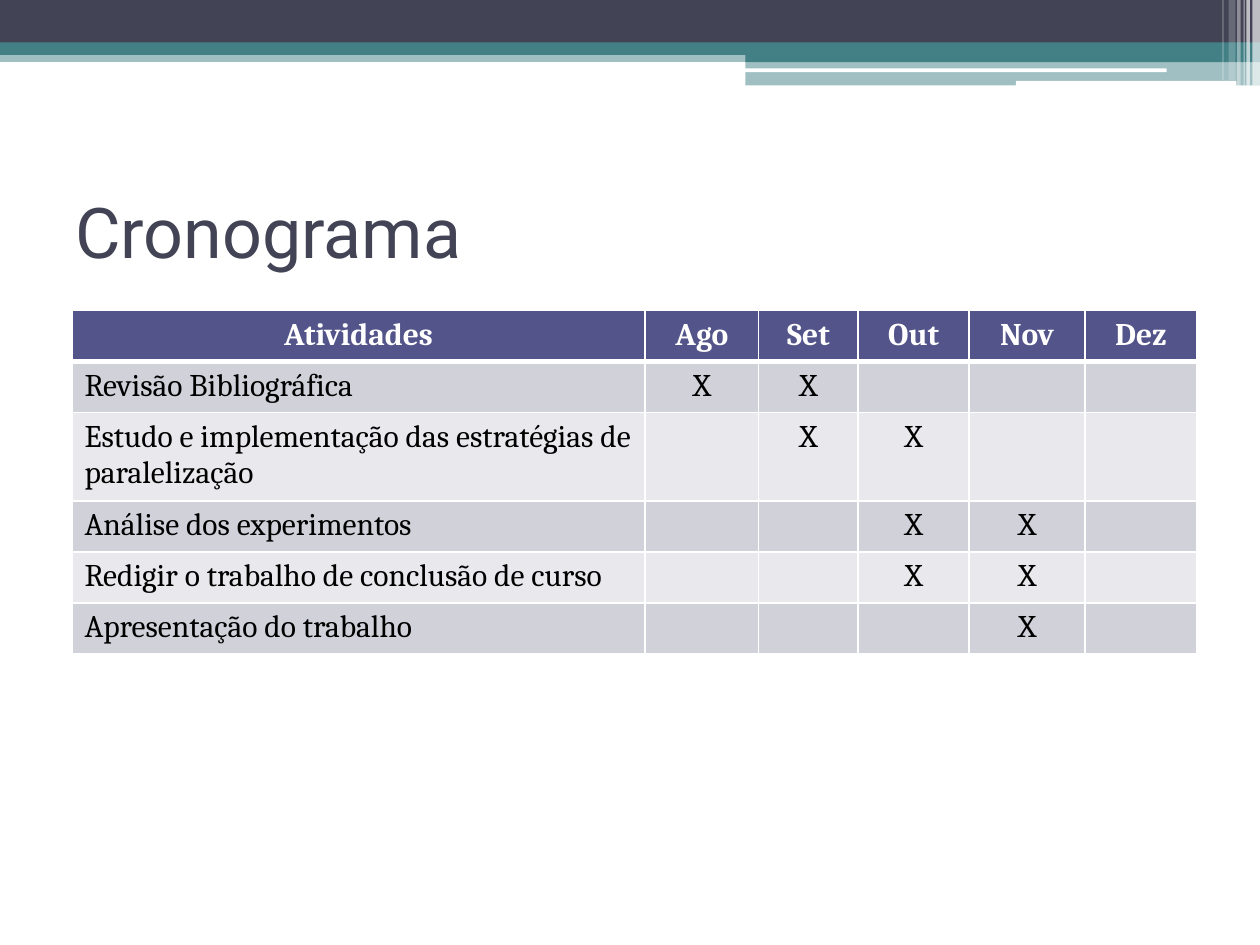
from dataclasses import dataclass

from lxml.etree import SubElement
from pptx import Presentation
from pptx.dml.color import RGBColor as RGB
from pptx.enum.shapes import MSO_SHAPE as Shape
from pptx.enum.text import MSO_ANCHOR as Anchor, PP_ALIGN as Align
from pptx.oxml import parse_xml
from pptx.oxml.ns import nsdecls, qn
from pptx.util import Pt


@dataclass(frozen=True)
class Theme:
    dark: str = "424456"
    teal: str = "438086"
    white: str = "FFFFFF"
    black: str = "000000"
    head: str = "53548A"
    bands: tuple = ("D1D1DA", "E9E9ED")
    title_font: str = "Roboto"
    body_font: str = "Cambria"
    title_size: int = 40
    body_size: int = 18


class Deck:
    def __init__(self, theme):
        self.theme = theme
        self.prs = Presentation()
        self.prs.slide_width, self.prs.slide_height = Pt(720), Pt(540)
        self.slide = self.prs.slides.add_slide(self.prs.slide_layouts[6])

    def bar(self, x, y, w, h, color, alpha=100, kind=Shape.RECTANGLE):
        """Add a borderless bar; alpha is its opacity in percent."""
        bar = self.slide.shapes.add_shape(kind, Pt(x), Pt(y), Pt(w), Pt(h))
        bar.shadow.inherit = False
        bar.line.fill.background()
        bar.fill.solid()
        bar.fill.fore_color.rgb = RGB.from_string(color)
        if alpha < 100:
            tint = bar.fill._xPr.find(qn("a:solidFill"))[0]
            SubElement(tint, qn("a:alpha"), val=str(alpha * 1000))

    def style(self, para, font, size, color, bold=False, align=Align.LEFT):
        para.alignment = align
        para.font.name, para.font.size, para.font.bold = font, Pt(size), bold
        para.font.color.rgb = RGB.from_string(color)

    def title(self, text, x, y, w, h):
        box = self.slide.shapes.add_textbox(Pt(x), Pt(y), Pt(w), Pt(h))
        frame = box.text_frame
        frame.word_wrap = True
        frame.vertical_anchor = Anchor.MIDDLE
        frame.text = text
        t = self.theme
        self.style(frame.paragraphs[0], t.title_font, t.title_size, t.dark)

    def border(self, cell, base):
        """Draw white edges; base is the width of the lower one."""
        props = cell._tc.get_or_add_tcPr()
        for i, (side, width) in enumerate(zip("LRTB", (1, 1, 1, base))):
            props.insert(i, parse_xml(
                f'<a:ln{side} {nsdecls("a")} w="{Pt(width)}"><a:solidFill>'
                f'<a:srgbClr val="{self.theme.white}"/></a:solidFill></a:ln{side}>'))

    def cell(self, cell, text, fill, color, bold, align, base):
        cell.fill.solid()
        cell.fill.fore_color.rgb = RGB.from_string(fill)
        self.border(cell, base)
        cell.text = text
        t = self.theme
        self.style(cell.text_frame.paragraphs[0], t.body_font, t.body_size,
                   color, bold, align)

    def table(self, rows, x, y, widths, high):
        t = self.theme
        grid = self.slide.shapes.add_table(
            len(rows), len(widths), Pt(x), Pt(y),
            Pt(sum(widths)), Pt(high * len(rows))).table
        for col, width in zip(grid.columns, widths):
            col.width = Pt(width)
        for r, texts in enumerate(rows):
            grid.rows[r].height = Pt(high)
            top = r == 0
            fill = t.head if top else t.bands[(r - 1) % 2]
            color = t.white if top else t.black
            for c, text in enumerate(texts):
                align = Align.CENTER if top or c else Align.LEFT
                # The line under row 0 belongs to both cells that touch it.
                self.cell(grid.cell(r, c), text, fill, color, top, align,
                          3 if top else 1)
                if r == 1:
                    edge = grid.cell(r, c)._tc.tcPr.find(qn("a:lnT"))
                    edge.set("w", str(Pt(3)))

    def save(self):
        self.prs.save("out.pptx")


MONTHS = ("Ago", "Set", "Out", "Nov", "Dez")
TASKS = {
    "Revisão Bibliográfica": ("Ago", "Set"),
    "Estudo e implementação das estratégias de paralelização": ("Set", "Out"),
    "Análise dos experimentos": ("Out", "Nov"),
    "Redigir o trabalho de conclusão de curso": ("Out", "Nov"),
    "Apresentação do trabalho": ("Nov",),
}
# left, width, height, opacity
STRIPES = (
    (715.7, 4.3, 49, 65), (712.2, 2, 49, 65), (710.6, 0.7, 49, 60),
    (707, 2, 49, 40), (702, 4, 46, 20), (698.5, 0.7, 46, 30),
)


def main():
    theme = Theme()
    deck = Deck(theme)
    deck.bar(0, 28.8, 720, 6.6, theme.teal, 50)
    deck.bar(0, 0, 720, 24.5, theme.dark)
    deck.bar(0, 24.2, 720, 7.2, theme.teal)
    deck.bar(426, 28.3, 294, 7.2, theme.teal)
    deck.bar(426, 34.6, 294, 14.2, theme.teal, 50)
    for x, y, w, h in ((425.5, 39.1, 241.2, 2.2), (580.5, 46.3, 126, 2.9)):
        deck.bar(x, y, w, h, theme.white, kind=Shape.ROUNDED_RECTANGLE)
    for x, w, h, alpha in STRIPES:
        deck.bar(x, 0, w, h, theme.white, alpha)

    deck.title("Cronograma", 36, 90, 648, 84)
    rows = [("Atividades", *MONTHS)]
    for task, active in TASKS.items():
        rows.append((task, *("X" if m in active else "" for m in MONTHS)))
    deck.table(rows, 41.1, 177.4, (327.6, 64.8, 56.9, 63.4, 66.2, 64), 29.2)
    deck.save()


if __name__ == "__main__":
    main()
